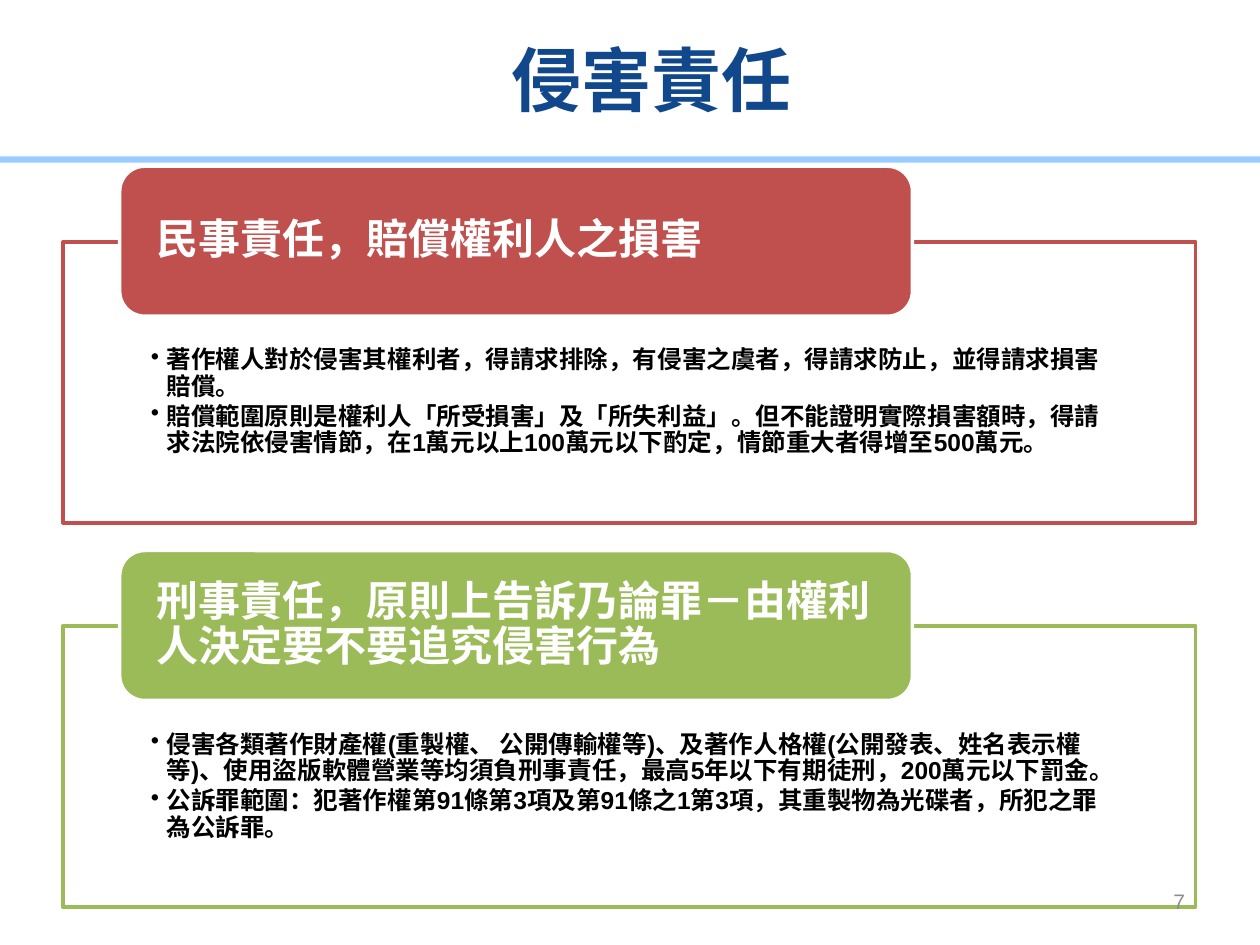
from lxml.etree import SubElement
from pptx import Presentation
from pptx.dml.color import RGBColor
from pptx.enum.shapes import MSO_SHAPE
from pptx.enum.text import MSO_ANCHOR, PP_ALIGN
from pptx.oxml.ns import qn
from pptx.util import Pt

COLORS = {
    "title": "11478B",
    "rule": "99CCFF",
    "civil": "C0504D",
    "criminal": "9BBB59",
    "white": "FFFFFF",
    "black": "000000",
    "number": "8C8C8C",
}
SECTIONS = [
    ("civil", "民事責任，賠償權利人之損害", [
        "著作權人對於侵害其權利者，得請求排除，有侵害之虞者，得請求防止，並得請求損害賠償。",
        "賠償範圍原則是權利人「所受損害」及「所失利益」。但不能證明實際損害額時，得請求法院依侵害情節，在1萬元以上100萬元以下酌定，情節重大者得增至500萬元。",
    ]),
    ("criminal", "刑事責任，原則上告訴乃論罪－由權利人決定要不要追究侵害行為", [
        "侵害各類著作財產權(重製權、 公開傳輸權等)、及著作人格權(公開發表、姓名表示權等)、使用盜版軟體營業等均須負刑事責任，最高5年以下有期徒刑，200萬元以下罰金。",
        "公訴罪範圍：犯著作權第91條第3項及第91條之1第3項，其重製物為光碟者，所犯之罪為公訴罪。",
    ]),
]
SECTION_TOP = 95
SECTION_PITCH = 219.6


class SlideBuilder:
    latin = "Arial"
    east_asian = "Noto Sans CJK SC"

    def __init__(self, page):
        self.page = page

    def color(self, name):
        return RGBColor.from_string(COLORS[name])

    def apply(self, target, values):
        for name, value in values.items():
            setattr(target, name, value)

    def shape(self, kind, place, fill, line=None, opacity=None):
        box = self.page.shapes.add_shape(kind, *map(Pt, place))
        box.shadow.inherit = False
        box.fill.solid()
        box.fill.fore_color.rgb = self.color(fill)
        if opacity:
            tint = box.fill._xPr.find(qn("a:solidFill"))[0]
            SubElement(tint, qn("a:alpha"), val=str(opacity * 1000))
        if line:
            box.line.color.rgb = self.color(line)
            box.line.width = Pt(2)
        else:
            box.line.fill.background()
        return box

    def text_box(self, place):
        return self.page.shapes.add_textbox(*map(Pt, place))

    def fill_text(self, box, texts, font, frame, layout, bullet=False):
        self.apply(box.text_frame, {"word_wrap": True, **frame})
        for index, text in enumerate(texts):
            body = box.text_frame
            para = body.add_paragraph() if index else body.paragraphs[0]
            if bullet:
                self.bullet(para)
            self.apply(para, layout)
            self.span(para, text, **font)

    def bullet(self, para):
        properties = para._p.get_or_add_pPr()
        properties.set("marL", str(Pt(9)))
        properties.set("indent", str(-Pt(9)))
        SubElement(properties, qn("a:buChar"), char="•")

    def span(self, para, text, size, color, bold=True, name=latin):
        span = para.add_run()
        span.text = text
        self.apply(span.font, {"name": name, "size": Pt(size), "bold": bold})
        span.font.color.rgb = self.color(color)
        SubElement(span._r.get_or_add_rPr(), qn("a:ea"), typeface=self.east_asian)

    def section(self, top, color, heading, items):
        panel = self.shape(MSO_SHAPE.RECTANGLE, (36, top + 43.2, 647.3, 160.6),
                           "white", color, opacity=90)
        self.fill_text(
            panel, items, {"size": 14, "color": "black"},
            {"vertical_anchor": MSO_ANCHOR.TOP, "margin_left": Pt(50.2),
             "margin_right": Pt(50.2), "margin_top": Pt(60.5), "margin_bottom": Pt(8)},
            {"alignment": PP_ALIGN.LEFT, "line_spacing": 0.9,
             "space_after": Pt(2.1), "level": 1},
            bullet=True)
        header = self.shape(MSO_SHAPE.ROUNDED_RECTANGLE, (68.4, top, 453, 85.7),
                            color, "white")
        self.fill_text(
            header, [heading], {"size": 24, "color": "white"},
            {"vertical_anchor": MSO_ANCHOR.MIDDLE, "margin_left": Pt(17.1),
             "margin_right": Pt(17.1), "margin_top": 0, "margin_bottom": 0},
            {"alignment": PP_ALIGN.LEFT, "line_spacing": 0.9})


def main():
    deck = Presentation()
    deck.slide_width, deck.slide_height = Pt(720), Pt(540)
    builder = SlideBuilder(deck.slides.add_slide(deck.slide_layouts[6]))
    middle = {"vertical_anchor": MSO_ANCHOR.MIDDLE}

    builder.shape(MSO_SHAPE.RECTANGLE, (-2.9, 89.3, 724.3, 3.6), "rule")
    builder.fill_text(builder.text_box((48.2, 0, 648, 90)), ["侵害責任"],
                      {"size": 40, "color": "title", "name": builder.east_asian},
                      middle, {"alignment": PP_ALIGN.CENTER})
    for index, (color, heading, items) in enumerate(SECTIONS):
        builder.section(SECTION_TOP + index * SECTION_PITCH, color, heading, items)
    builder.fill_text(builder.text_box((516.2, 500.4, 168, 28.8)), ["7"],
                      {"size": 12, "color": "number", "bold": False},
                      middle, {"alignment": PP_ALIGN.RIGHT})
    deck.save("out.pptx")


if __name__ == "__main__":
    main()
